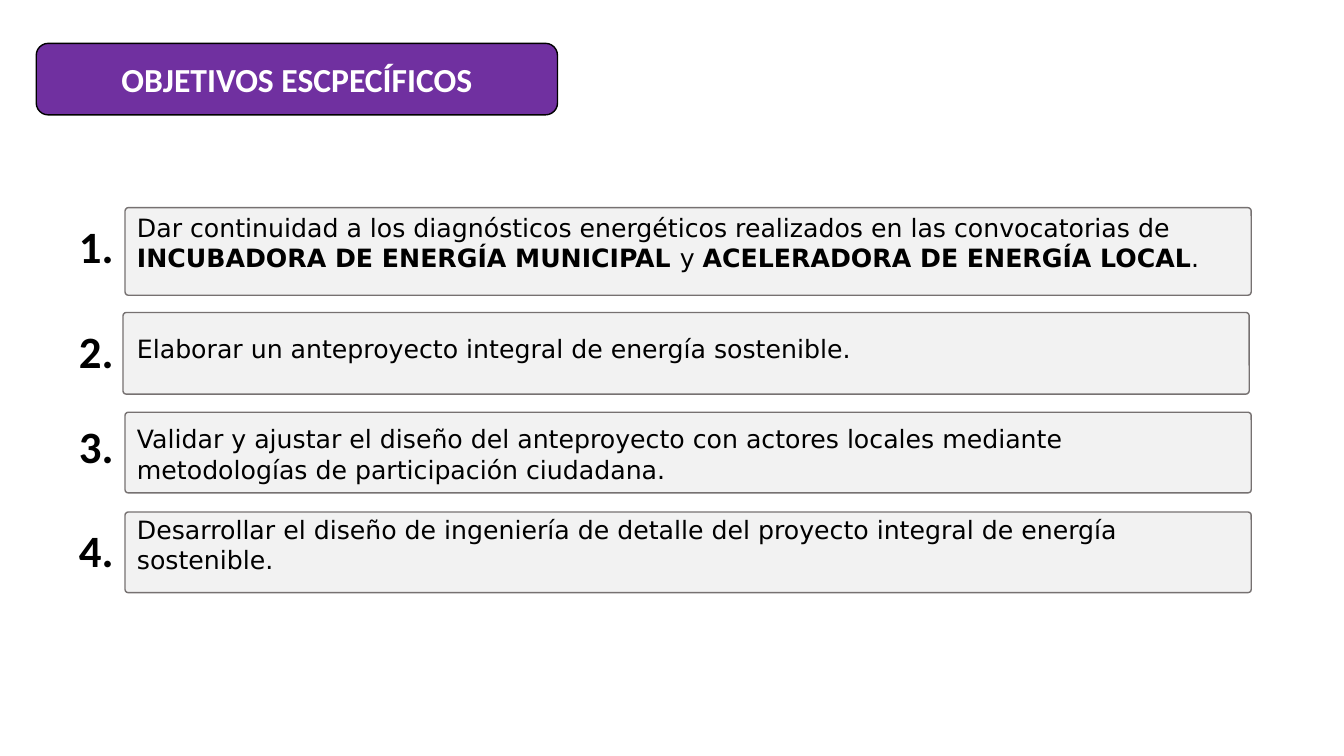
from pptx import Presentation
from pptx.dml.color import RGBColor
from pptx.enum.shapes import MSO_SHAPE
from pptx.enum.text import MSO_ANCHOR, PP_ALIGN
from pptx.util import Inches, Pt

ROUNDED = MSO_SHAPE.ROUNDED_RECTANGLE
CENTER, LEFT = PP_ALIGN.CENTER, PP_ALIGN.LEFT
MIDDLE = MSO_ANCHOR.MIDDLE

COLORS = {
    "purple": "7030A0",
    "panel": "F2F2F2",
    "panel_line": "767171",
    "black": "000000",
    "white": "FFFFFF",
}
HEADING_FONT = "Calibri"
BODY_FONT = "DejaVu Sans"

# Panel left, top, height and top of its number, in inches
ROWS = [
    (1.24, 2.06, 0.87, 2.12),
    (1.22, 3.10, 0.81, 3.16),
    (1.24, 4.09, 0.80, 4.10),
    (1.24, 5.08, 0.80, 5.14),
]

# Space before in points, then runs of (text, bold)
OBJECTIVES = [
    (0, [
        ("Dar continuidad a los diagnósticos energéticos realizados en las convocatorias de ", False),
        ("INCUBADORA DE ENERGÍA MUNICIPAL ", True),
        ("y ", False),
        ("ACELERADORA DE ENERGÍA LOCAL", True),
        (".", False),
    ]),
    (43, [("Elaborar un anteproyecto integral de energía sostenible.", False)]),
    (43, [("Validar y ajustar el diseño del anteproyecto con actores locales "
           "mediante metodologías de participación ciudadana.", False)]),
    (21.5, [("Desarrollar el diseño de ingeniería de detalle del proyecto "
             "integral de energía sostenible.", False)]),
]


def rgb(name):
    return RGBColor.from_string(COLORS[name])


def add_run(p, text, size, font, color="black", bold=False):
    r = p.add_run()
    r.text = text
    r.font.size = Pt(size)
    r.font.name = font
    r.font.bold = bold
    r.font.color.rgb = rgb(color)


def add_panel(s, left, top, width, height, fill, line, corner):
    sp = s.shapes.add_shape(ROUNDED, Inches(left), Inches(top), Inches(width), Inches(height))
    sp.adjustments[0] = corner
    sp.shadow.inherit = False
    sp.fill.solid()
    sp.fill.fore_color.rgb = rgb(fill)
    sp.line.color.rgb = rgb(line)
    sp.line.width = Pt(1)
    return sp


def add_text_frame(s, left, top, width, height):
    box = s.shapes.add_textbox(Inches(left), Inches(top), Inches(width), Inches(height))
    tf = box.text_frame
    tf.word_wrap = True
    return tf


def add_title(s, text):
    sp = add_panel(s, 0.36, 0.43, 5.17, 0.71, "purple", "black", 0.167)
    tf = sp.text_frame
    tf.vertical_anchor = MIDDLE
    p = tf.paragraphs[0]
    p.alignment = CENTER
    add_run(p, text, 24, HEADING_FONT, "white", True)


def add_number(s, number, top):
    p = add_text_frame(s, 0.57, top, 0.77, 0.64).paragraphs[0]
    p.alignment = CENTER
    add_run(p, f"{number}.", 32, HEADING_FONT, bold=True)


def add_objectives(s):
    """Write all objectives in one text box, spaced to fall on their panels."""
    tf = add_text_frame(s, 1.26, 2.06, 11.01, 4.34)
    for i, (space, runs) in enumerate(OBJECTIVES):
        p = tf.add_paragraph() if i else tf.paragraphs[0]
        p.alignment = LEFT
        p.space_before = Pt(space)
        for text, bold in runs:
            add_run(p, text, 18, BODY_FONT, bold=bold)


def main():
    prs = Presentation()
    prs.slide_width, prs.slide_height = Inches(13.33), Inches(7.5)
    s = prs.slides.add_slide(prs.slide_layouts[6])

    add_title(s, "OBJETIVOS ESCPECÍFICOS")
    for left, top, height, _ in ROWS:
        add_panel(s, left, top, 11.17, height, "panel", "panel_line", 0.04)
    add_objectives(s)
    for number, (_, _, _, number_top) in enumerate(ROWS, 1):
        add_number(s, number, number_top)

    prs.save("out.pptx")


if __name__ == "__main__":
    main()
